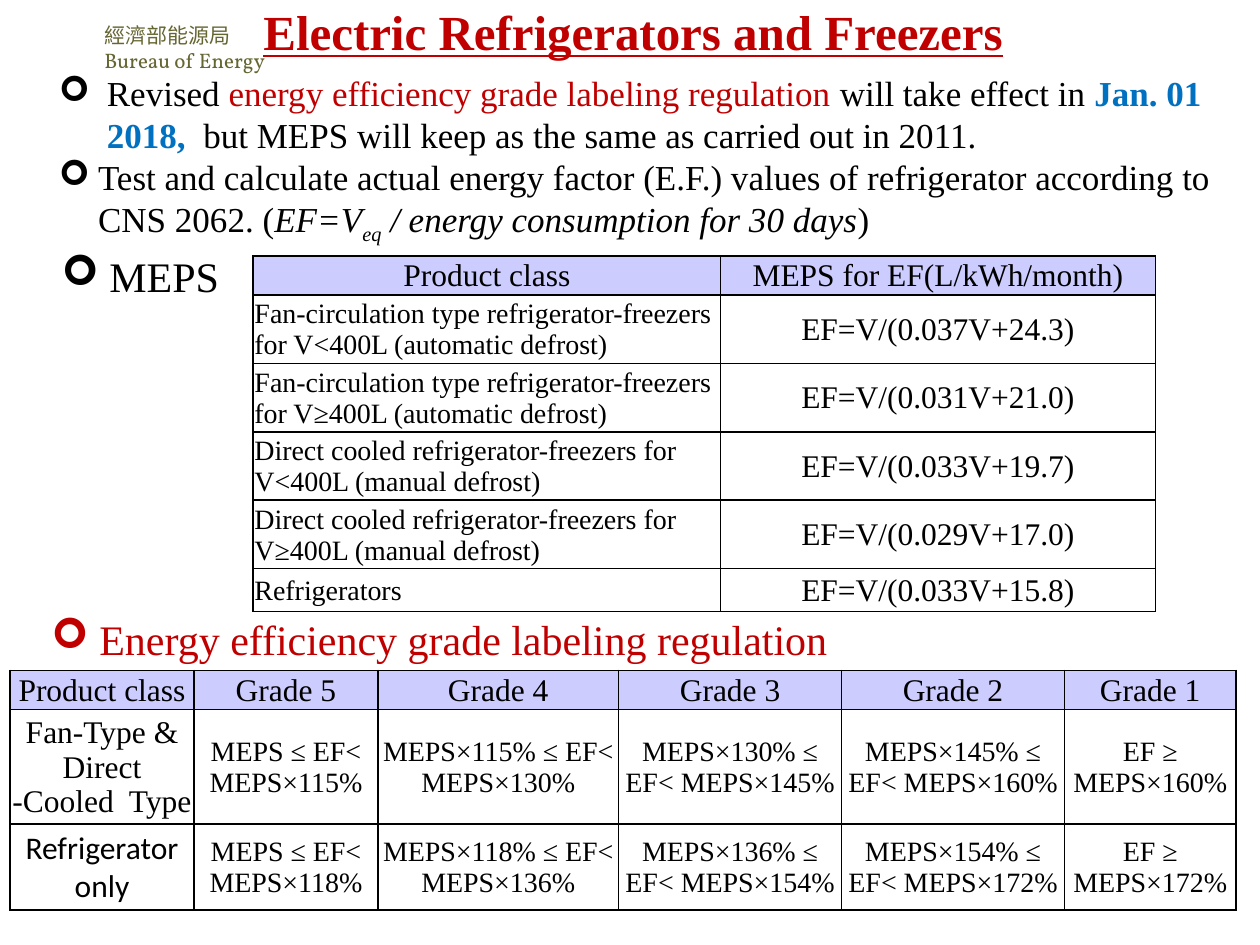
from lxml.etree import SubElement
from pptx import Presentation
from pptx.dml.color import RGBColor
from pptx.enum.text import MSO_ANCHOR as Anchor, PP_ALIGN as Align
from pptx.oxml import parse_xml
from pptx.oxml.ns import nsdecls, qn
from pptx.util import Inches, Pt


class Theme:
    serif, sans, logo_face = "Times New Roman", "Calibri", "Vollkorn"
    black, red, blue, olive, header = "000000", "C00000", "0070C0", "666633", "CCCCFF"
    title, heading, body, cell, detail, small = (Pt(size) for size in (28, 24, 20, 18, 16, 12))


MEPS_ROWS = [
    ("Product class", "MEPS for EF(L/kWh/month)"),
    ("Fan-circulation type refrigerator-freezers for V<400L (automatic defrost)", "EF=V/(0.037V+24.3)"),
    ("Fan-circulation type refrigerator-freezers for V≥400L (automatic defrost)", "EF=V/(0.031V+21.0)"),
    ("Direct cooled refrigerator-freezers for V<400L (manual defrost)", "EF=V/(0.033V+19.7)"),
    ("Direct cooled refrigerator-freezers for V≥400L (manual defrost)", "EF=V/(0.029V+17.0)"),
    ("Refrigerators", "EF=V/(0.033V+15.8)"),
]
GRADE_LIMITS = [
    ("Fan-Type & Direct -Cooled  Type", (115, 130, 145, 160)),
    ("Refrigerator only", (118, 136, 154, 172)),
]


def grade_rows():
    rows = [["Product class"] + [f"Grade {grade}" for grade in range(5, 0, -1)]]
    for product, limits in GRADE_LIMITS:
        steps = ["MEPS"] + [f"MEPS×{limit}%" for limit in limits]
        ranges = [f"{low} ≤ EF< {high}" for low, high in zip(steps, steps[1:])]
        rows.append([product, *ranges, f"EF ≥ {steps[-1]}"])
    return rows


def add_run(paragraph, text, size, color=Theme.black, name=Theme.serif, baseline=0, **extra):
    run = paragraph.add_run()
    run.text = text
    for attribute, value in {"size": size, "name": name, **extra}.items():
        setattr(run.font, attribute, value)
    run.font.color.rgb = RGBColor.from_string(color)
    if baseline:
        run.font._element.set("baseline", str(baseline * 1000))


def set_bullet(paragraph, indent, color):
    properties = paragraph._p.get_or_add_pPr()
    properties.set("marL", str(Inches(indent)))
    properties.set("indent", str(-Inches(indent)))
    bullet_color = SubElement(properties, qn("a:buClr"))
    SubElement(bullet_color, qn("a:srgbClr")).set("val", color)
    SubElement(properties, qn("a:buFont")).set("typeface", "Wingdings")
    SubElement(properties, qn("a:buChar")).set("char", "➢")


def add_text(slide, box, paragraphs, size, wrap=True):
    frame = slide.shapes.add_textbox(*map(Inches, box)).text_frame
    frame.word_wrap = wrap
    for index, (indent, runs) in enumerate(paragraphs):
        paragraph = frame.add_paragraph() if index else frame.paragraphs[0]
        if indent:
            set_bullet(paragraph, indent, runs[0][1].get("color", Theme.black))
        for text, style in runs:
            add_run(paragraph, text, size, **style)
    return frame


def add_title(slide, text):
    title = slide.shapes.title
    box = {"left": 1.6, "top": -0.03, "width": 6.85, "height": 0.55}
    for attribute, value in box.items():
        setattr(title, attribute, Inches(value))
    frame = title.text_frame
    frame.vertical_anchor = Anchor.MIDDLE
    paragraph = frame.paragraphs[0]
    paragraph.alignment = Align.CENTER
    add_run(paragraph, text, Theme.title, Theme.red, bold=True, underline=True)


def add_borders(cell):
    properties = cell._tc.get_or_add_tcPr()
    for index, side in enumerate(("lnL", "lnR", "lnT", "lnB")):
        properties.insert(index, parse_xml(
            f'<a:{side} {nsdecls("a")} w="{Pt(1)}"><a:solidFill>'
            f'<a:srgbClr val="{Theme.black}"/></a:solidFill></a:{side}>'))


def add_table(slide, left, top, widths, heights, rows, cell_style):
    box = (left, top, sum(widths), sum(heights))
    table = slide.shapes.add_table(len(rows), len(widths), *map(Inches, box)).table
    table.first_row = table.horz_banding = False
    for column, width in zip(table.columns, widths):
        column.width = Inches(width)
    for row, height in zip(table.rows, heights):
        row.height = Inches(height)
    margins = {"margin_left": 0.01, "margin_right": 0.01, "margin_top": 0.01, "margin_bottom": 0}
    for row_index, row in enumerate(rows):
        for column_index, text in enumerate(row):
            cell = table.cell(row_index, column_index)
            for attribute, value in margins.items():
                setattr(cell, attribute, Inches(value))
            cell.vertical_anchor = Anchor.MIDDLE
            if row_index == 0:
                cell.fill.solid()
                cell.fill.fore_color.rgb = RGBColor.from_string(Theme.header)
            else:
                cell.fill.background()
            add_borders(cell)
            alignment, size, name = cell_style(row_index, column_index)
            paragraph = cell.text_frame.paragraphs[0]
            paragraph.alignment = alignment
            add_run(paragraph, text, size, name=name)


def meps_style(row, column):
    if row and column == 0:
        return Align.LEFT, Theme.detail, Theme.serif
    return Align.CENTER, Theme.cell, Theme.serif


def grade_style(row, column):
    size = Theme.detail if row and column else Theme.cell
    name = Theme.sans if (row, column) == (2, 0) else Theme.serif
    return Align.CENTER, size, name


def main():
    presentation = Presentation()
    presentation.slide_width, presentation.slide_height = Inches(10), Inches(7.5)
    slide = presentation.slides.add_slide(presentation.slide_layouts[5])

    agency = {"color": Theme.olive, "name": Theme.logo_face}
    add_text(slide, (0.73, 0.13, 1.59, 0.52),
             [(0, [("經濟部能源局", agency)]), (0, [("Bureau of Energy", agency)])], Theme.small)
    add_title(slide, "Electric Refrigerators and Freezers")

    red, italic = {"color": Theme.red}, {"italic": True}
    summary = add_text(slide, (0.37, 0.52, 9.63, 1.45), [
        (0.38, [("Revised ", {}),
                ("energy efficiency grade labeling regulation ", red),
                ("will take effect in ", {}),
                ("Jan. 01 2018,  ", {"color": Theme.blue, "bold": True}),
                ("but MEPS will keep as the same as carried out in 2011.", {})]),
        (0.31, [("Test and calculate actual energy factor (E.F.) values of refrigerator "
                 "according to CNS 2062. (", {}),
                ("EF=V", italic),
                ("eq", {"baseline": -25, **italic}),
                (" / energy consumption for 30 days", italic),
                (")", {})]),
    ], Theme.body)
    summary.paragraphs[-1].space_after = Pt(6)

    add_table(slide, 0.08, 5.32, (1.46, 1.46, 1.91, 1.77, 1.77, 1.36),
              (0.31, 0.91, 0.68), grade_rows(), grade_style)
    add_text(slide, (0.31, 4.82, 6.61, 0.5),
             [(0.38, [("Energy efficiency grade labeling regulation", red)])], Theme.heading)
    add_text(slide, (0.39, 1.94, 1.46, 0.5), [(0.38, [("MEPS", {})])], Theme.heading, wrap=False)
    add_table(slide, 2.01, 2.03, (3.71, 3.45), (0.31, *[0.54] * 4, 0.34), MEPS_ROWS, meps_style)
    presentation.save("out.pptx")


if __name__ == "__main__":
    main()
